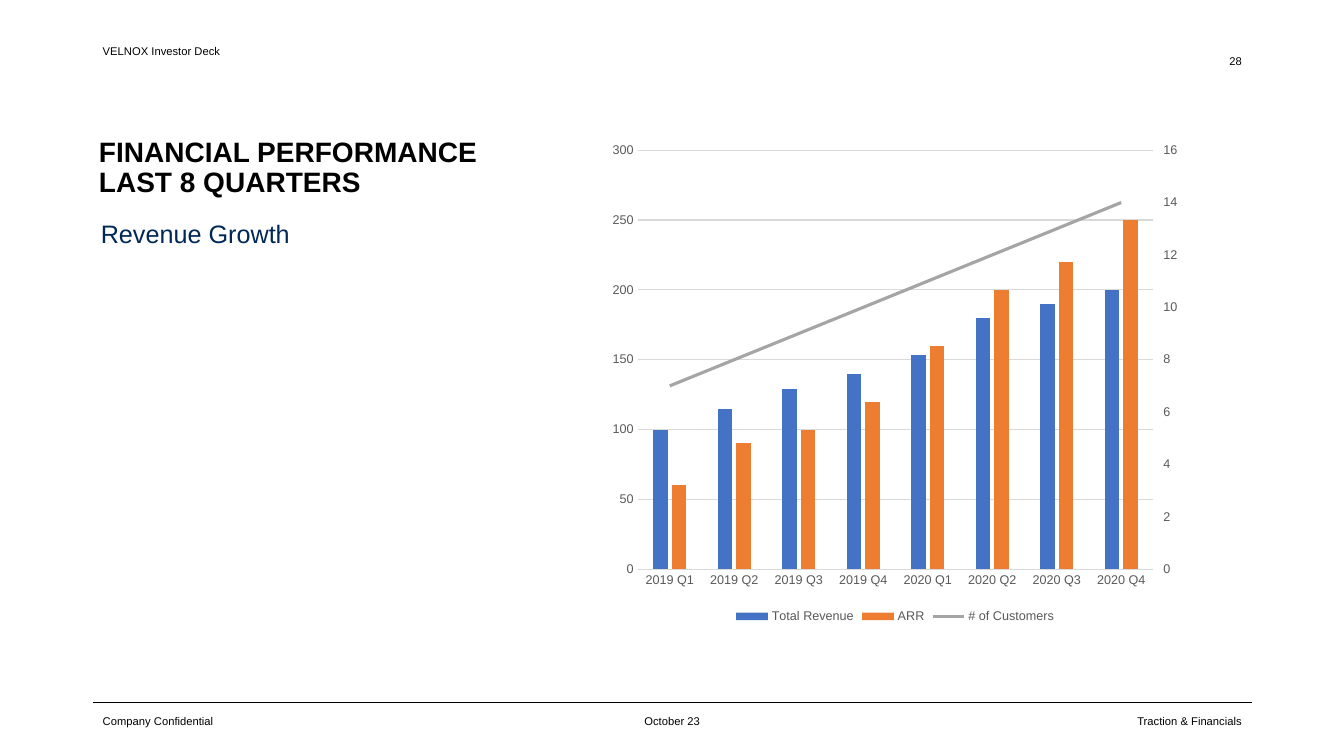
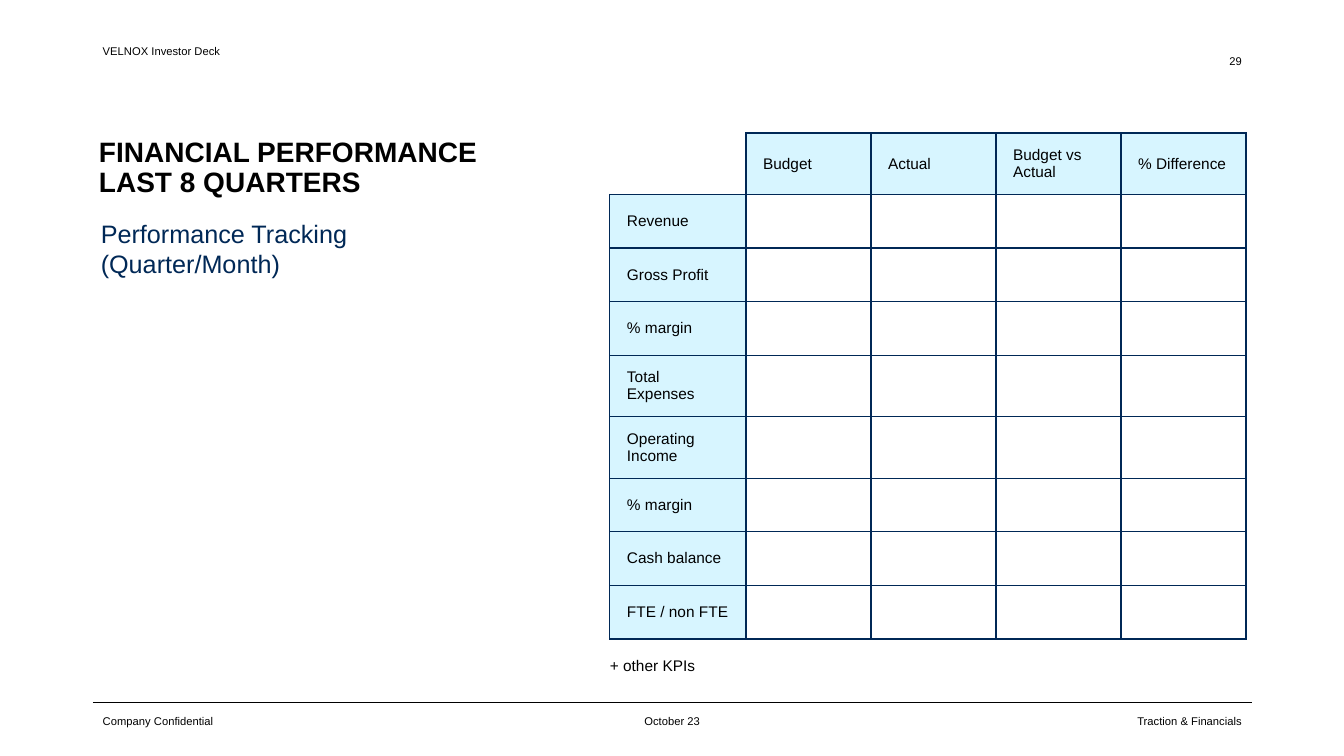
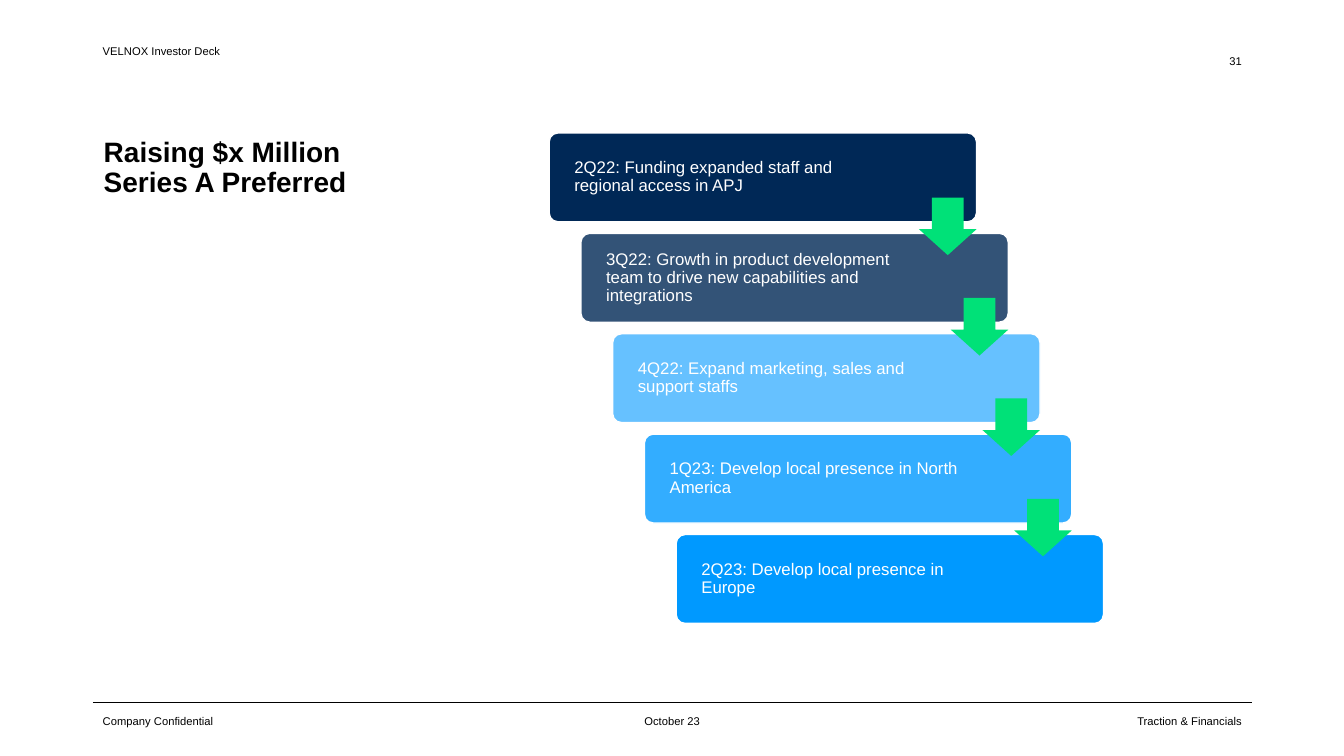
from copy import deepcopy
from lxml.etree import SubElement
from pptx import Presentation
from pptx.chart.axis import CategoryAxis, ValueAxis
from pptx.chart.data import CategoryChartData
from pptx.dml.color import RGBColor
from pptx.enum.chart import (XL_CHART_TYPE, XL_LEGEND_POSITION,
                             XL_MARKER_STYLE, XL_TICK_MARK)
from pptx.enum.shapes import MSO_CONNECTOR, MSO_SHAPE
from pptx.enum.text import MSO_ANCHOR, MSO_AUTO_SIZE, PP_ALIGN
from pptx.oxml import parse_xml
from pptx.oxml.ns import nsdecls, qn
from pptx.util import Cm, Pt

BLACK = RGBColor(0x00, 0x00, 0x00)
WHITE = RGBColor(0xFF, 0xFF, 0xFF)
NAVY = RGBColor(0x00, 0x28, 0x56)
AZURE = RGBColor(0x00, 0x99, 0xFF)
PALE = RGBColor(0xD7, 0xF5, 0xFF)
GREEN = RGBColor(0x00, 0xE1, 0x78)
GREY = RGBColor(0x59, 0x59, 0x59)
RULE = RGBColor(0xD9, 0xD9, 0xD9)
BLUE = RGBColor(0x44, 0x72, 0xC4)
ORANGE = RGBColor(0xED, 0x7D, 0x31)
SILVER = RGBColor(0xA5, 0xA5, 0xA5)
FONT = "Arial"
LEFT, RIGHT = 2.34, 31.55
TOP, FOOT, BAND = 3.35, 17.65, 1.02
PERF = ["FINANCIAL PERFORMANCE", "LAST 8 QUARTERS"]


def write(frame, lines, size, color=BLACK, bold=False, align=PP_ALIGN.LEFT,
          space=None, anchor=MSO_ANCHOR.TOP, wrap=True):
    """Fill a text frame, one paragraph a line."""
    frame.word_wrap = wrap
    frame.auto_size = MSO_AUTO_SIZE.NONE
    frame.vertical_anchor = anchor
    for n, line in enumerate(lines):
        para = frame.add_paragraph() if n else frame.paragraphs[0]
        para.alignment = align
        para.space_before = Pt(0)
        if space:
            para.line_spacing = space
        run = para.add_run()
        run.text = line
        font = run.font
        font.name, font.size, font.bold = FONT, Pt(size), bold
        font.color.rgb = color


def place(shape, x, y, w, h):
    shape.left, shape.top, shape.width, shape.height = map(Cm, (x, y, w, h))


def label(slide, box, text, size=8, **style):
    shape = slide.shapes.add_textbox(*map(Cm, box))
    write(shape.text_frame, [text], size, **style)
    return shape


# Shared layout: running header, footer rule and notice
def brand(layout, slide):
    for mark in list(layout.placeholders):
        if mark.placeholder_format.idx > 1:
            mark.element.getparent().remove(mark.element)
    note = label(slide, (LEFT, FOOT, 4.78, BAND), "Company Confidential",
                 anchor=MSO_ANCHOR.MIDDLE)
    head = label(slide, (LEFT, BAND, 6.76, BAND), "VELNOX Investor Deck",
                 space=0.9)
    rule = slide.shapes.add_connector(MSO_CONNECTOR.STRAIGHT, Cm(LEFT),
                                      Cm(17.7), Cm(RIGHT), Cm(17.7))
    rule.line.color.rgb = BLACK
    rule.line.width = Pt(0.5)
    SubElement(rule.element.spPr, qn("a:effectLst"))
    for shape in (note, rule, head):
        layout.shapes.element.append(shape.element)


# Parts of each slide: date, section, page number, title and subtitle
def dress(slide, page, title, x=2.24, sub=(), width=0):
    mid = MSO_ANCHOR.MIDDLE
    label(slide, (13.13, FOOT, 7.62, BAND), "October 23",
          align=PP_ALIGN.CENTER, anchor=mid)
    label(slide, (RIGHT - 8.51, FOOT, 8.51, BAND), "Traction & Financials",
          align=PP_ALIGN.RIGHT, anchor=mid)
    label(slide, (RIGHT - 7.62, BAND, 7.62, BAND), str(page),
          align=PP_ALIGN.RIGHT, anchor=mid)
    head = slide.shapes.title
    place(head, x, TOP, 10.44, 1.42)
    write(head.text_frame, title, 20, bold=True, space=0.9)
    body = slide.placeholders[1]
    if not sub:
        body.element.getparent().remove(body.element)
        return
    place(body, 2.54, 5.38, width, 0.24 + 0.78 * len(sub))
    write(body.text_frame, sub, 18, NAVY, wrap=False)
    body.text_frame.margin_left = 0
    for para in body.element.iter(qn("a:pPr")):
        para.set("marL", "0")
        para.set("indent", "0")
        SubElement(para, qn("a:buNone"))


# Bars on the left axis, customer line on the right axis
def growth(slide, x, y, w, h):
    data = CategoryChartData()
    data.categories = [f"{year} Q{n}" for year in (2019, 2020)
                       for n in range(1, 5)]
    data.add_series("Total Revenue", (100, 115, 129, 140, 153, 180, 190, 200))
    data.add_series("ARR", (60, 90, 100, 120, 160, 200, 220, 250))
    data.add_series("# of Customers", range(7, 15))
    chart = slide.shapes.add_chart(XL_CHART_TYPE.COLUMN_CLUSTERED,
                                   *map(Cm, (x, y, w, h)), data).chart
    chart.has_title = False
    chart.font.name, chart.font.size = FONT, Pt(9)
    chart.font.color.rgb = GREY
    chart.has_legend = True
    chart.legend.position = XL_LEGEND_POSITION.BOTTOM
    chart.legend.include_in_layout = False

    # Left and bottom axes
    cat, val = chart.category_axis, chart.value_axis
    for axis in (cat, val):
        axis.major_tick_mark = XL_TICK_MARK.NONE
    cat.format.line.color.rgb = RULE
    cat.format.line.width = Pt(0.75)
    val.format.line.fill.background()
    val.has_major_gridlines = True
    grid = val.major_gridlines.format.line
    grid.color.rgb, grid.width = RULE, Pt(0.75)

    # Right axis with its hidden category axis
    root = chart.element
    base, side = root.xpath(".//c:catAx")[0], root.xpath(".//c:valAx")[0]
    low, right = deepcopy(base), deepcopy(side)
    side.addnext(right)
    right.addnext(low)
    for axis, own, other in ((low, "901", "902"), (right, "902", "901")):
        axis.find(qn("c:axId")).set("val", own)
        axis.find(qn("c:crossAx")).set("val", other)
    right.find(qn("c:axPos")).set("val", "r")
    right.find(qn("c:crosses")).set("val", "max")
    CategoryAxis(low).visible = False
    far = ValueAxis(right)
    far.has_major_gridlines = False
    far.major_tick_mark = XL_TICK_MARK.OUTSIDE
    for axis, top, step in ((val, 300, 50), (far, 16, 2)):
        axis.minimum_scale, axis.maximum_scale = 0, top
        axis.major_unit = step

    # Move the third series to a line plot
    bars = root.xpath(".//c:barChart")[0]
    trend = parse_xml(
        f'<c:lineChart {nsdecls("c")}><c:grouping val="standard"/>'
        '<c:varyColors val="0"/><c:marker val="1"/>'
        '<c:axId val="901"/><c:axId val="902"/></c:lineChart>')
    ser = bars.findall(qn("c:ser"))[2]
    for flag in ser.findall(qn("c:invertIfNegative")):
        ser.remove(flag)
    trend.insert(2, ser)
    bars.addnext(trend)
    plot, curve = chart.plots
    plot.vary_by_categories = False
    plot.gap_width, plot.overlap = 219, -27
    for bar, color in zip(plot.series, (BLUE, ORANGE)):
        bar.invert_if_negative = False
        bar.format.fill.solid()
        bar.format.fill.fore_color.rgb = color
    line = curve.series[0]
    line.smooth = False
    line.marker.style = XL_MARKER_STYLE.NONE
    line.format.line.color.rgb = SILVER
    line.format.line.width = Pt(2.25)


def border(cell, sides, color):
    props = cell.get_or_add_tcPr()
    for side in sides:
        edge = SubElement(props, qn(f"a:ln{side}"), w="12700")
        fill = SubElement(edge, qn("a:solidFill"))
        SubElement(fill, qn("a:srgbClr"), val=str(color))


# Tracking table: headings in the first row and column
def track(slide, x, y):
    heads = ["", "Budget", "Actual", "Budget vs Actual", "% Difference"]
    names = ["Revenue", "Gross Profit", "% margin", "Total Expenses",
             "Operating Income", "% margin", "Cash balance", "FTE / non FTE"]
    wide = [3.43] + [3.15] * 4
    high = [1.55 if n in (0, 4, 5) else 1.35 for n in range(9)]
    frame = slide.shapes.add_table(9, 5, *map(Cm, (x, y, sum(wide), sum(high))))
    table = frame.table
    table.first_row = table.horz_banding = False
    for col, size in zip(table.columns, wide):
        col.width = Cm(size)
    for row, size in zip(table.rows, high):
        row.height = Cm(size)
    texts = heads + [t for name in names for t in [name] + [""] * 4]
    nodes = frame.element.iter(qn("a:tc"))
    for n, (cell, node, text) in enumerate(zip(table.iter_cells(), nodes, texts)):
        border(node, "LRTB" if n else "RB", NAVY)
        if not text:
            cell.fill.background()
            continue
        cell.fill.solid()
        cell.fill.fore_color.rgb = PALE
        cell.margin_left = cell.margin_right = Cm(0.43)
        cell.margin_top = cell.margin_bottom = Cm(0.33)
        cell.vertical_anchor = MSO_ANCHOR.MIDDLE
        run = cell.text_frame.paragraphs[0].add_run()
        run.text = text
        run.font.name, run.font.size = FONT, Pt(11)
        run.font.color.rgb = BLACK
    more = label(slide, (x, y + 13.06, 2.41, 0.74), "+ other KPIs", 11,
                 wrap=False)
    more.text_frame.margin_left = 0


def block(slide, kind, box, color, alpha=100):
    shape = slide.shapes.add_shape(kind, *map(Cm, box))
    shape.shadow.inherit = False
    shape.fill.solid()
    shape.fill.fore_color.rgb = color
    shape.line.fill.background()
    if alpha < 100:
        tint = shape.element.xpath("./p:spPr/a:solidFill/a:srgbClr")[0]
        SubElement(tint, qn("a:alpha"), val=str(alpha * 1000))
    return shape


# Staircase of milestones joined by arrows
def stairs(slide, x, y):
    steps = [
        ("2Q22: Funding expanded staff and regional access in APJ", NAVY, 100),
        ("3Q22: Growth in product development team to drive new "
         "capabilities and integrations", NAVY, 80),
        ("4Q22: Expand marketing, sales and support staffs", AZURE, 60),
        ("1Q23: Develop local presence in North America", AZURE, 80),
        ("2Q23: Develop local presence in Europe", AZURE, 100)]
    w, h, dx, dy, tip = 10.77, 2.24, 0.8, 2.53, 1.45
    for n, (text, color, alpha) in enumerate(steps):
        box = (x + n * dx, y + n * dy, w, h)
        step = block(slide, MSO_SHAPE.ROUNDED_RECTANGLE, box, color, alpha)
        step.adjustments[0] = 0.1
        step.line.color.rgb = WHITE
        step.line.width = Pt(1)
        frame = step.text_frame
        frame.margin_left, frame.margin_right = Cm(0.57), Cm(2.5)
        write(frame, [text], 12, WHITE, space=0.9, anchor=MSO_ANCHOR.MIDDLE)
    for n in range(len(steps) - 1):
        box = (x + n * dx + w - tip, y + n * dy + 1.63, tip, tip)
        arrow = block(slide, MSO_SHAPE.DOWN_ARROW, box, GREEN)
        arrow.adjustments[0], arrow.adjustments[1] = 0.55, 0.45


def main():
    deck = Presentation()
    deck.slide_width, deck.slide_height = Cm(33.87), Cm(19.05)
    layout = deck.slide_layouts[1]
    sales, goals, funds = [deck.slides.add_slide(layout) for _ in range(3)]
    brand(layout, sales)

    dress(sales, 28, PERF, sub=["Revenue Growth"], width=5.05)
    growth(sales, 15.14, TOP, 14.83, 12.47)

    dress(goals, 29, PERF, sub=["Performance Tracking", "(Quarter/Month)"],
          width=6.71)
    track(goals, 15.37, TOP)

    dress(funds, 31, ["Raising $x Million", "Series A Preferred"], x=2.36)
    stairs(funds, 13.84, TOP)
    deck.save("out.pptx")


if __name__ == "__main__":
    main()
